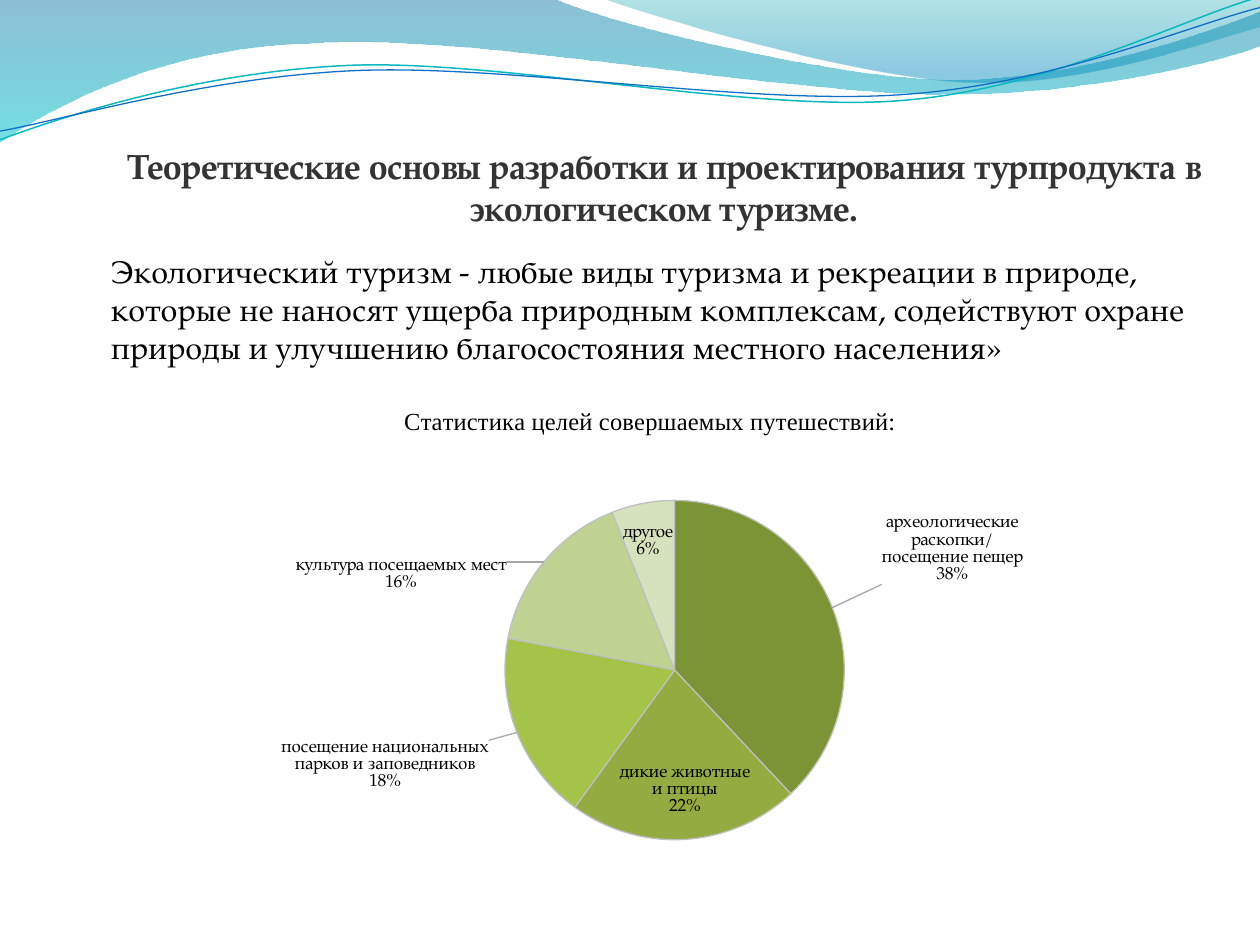
from pptx import Presentation
from pptx.chart.data import CategoryChartData
from pptx.dml.color import RGBColor
from pptx.enum.chart import XL_CHART_TYPE, XL_LABEL_POSITION
from pptx.enum.text import MSO_ANCHOR, PP_ALIGN
from pptx.oxml import parse_xml
from pptx.oxml.ns import nsdecls, qn
from pptx.util import Pt

PIE = XL_CHART_TYPE.PIE
OUTSIDE, INSIDE = XL_LABEL_POSITION.OUTSIDE_END, XL_LABEL_POSITION.INSIDE_END
MIDDLE, TOP = MSO_ANCHOR.MIDDLE, MSO_ANCHOR.TOP
CENTER, LEFT = PP_ALIGN.CENTER, PP_ALIGN.LEFT

THEME = {
    "font": "TeX Gyre Pagella", "chart_title_font": "Times New Roman",
    "title": "333333", "text": "000000", "slice_border": "BFBFBF", "leader": "A6A6A6",
    "title_size": 20, "body_size": 18, "chart_title_size": 14, "label_size": 10,
}

TITLE = "Теоретические основы разработки и проектирования турпродукта в экологическом туризме."
BODY = ("Экологический туризм - любые виды туризма и рекреации в природе, "
        "которые не наносят ущерба природным комплексам, содействуют охране "
        "природы и улучшению благосостояния местного населения»")
CHART_TITLE = "Статистика целей совершаемых путешествий:"

# category, value, colour, label position, label shift and label size
# (shift and size are shares of the chart)
SLICES = [
    ("археологические раскопки/посещение пещер", 38, "7C9336", OUTSIDE, (0.04, -0.04), None),
    ("дикие животные и птицы", 22, "93AB41", INSIDE, (0, -0.03), None),
    ("посещение национальных парков и заповедников", 18, "A5C249", OUTSIDE,
     (-0.02, 0.01), (0.19, 0.14)),
    ("культура посещаемых мест", 16, "C0D292", OUTSIDE, (-0.03, 0.07), (0.19, 0.1)),
    ("другое", 6, "D6E1BD", INSIDE, (-0.02, 0.03), None),
]
FIRST_LABEL = "археологические раскопки/\nпосещение пещер\n38%"
PLOT_AREA = {"x": 0.363, "y": 0.226, "w": 0.32, "h": 0.66}

# Outlines: a pair is a straight step, a triple of pairs is a Bezier step.
# Gradient stops: position, colour, opacity in percent.
WAVES = [
    ([(0, 0), (316.8, -0.7),
      ((342.7, 12.2), (478.1, 45.4), (545.8, 45.4)),
      ((614.2, 45.4), (689.8, 18.7), (720, 6.5)), (720.7, 25.9),
      ((707.8, 31.7), (626.4, 54.7), (537.1, 54)),
      ((447.8, 54), (275, 20.2), (185, 24.5)),
      ((92.9, 25.9), (33.1, 59.8), (-0.7, 81.4))],
     [(0, "0074A1", 45), (1, "00C6CF", 55)]),
    ([(344.9, -0.7),
      ((366.5, 7.9), (491, 44.6), (553.7, 46.8)),
      ((616.3, 49.7), (691.9, 23), (720, 15.1)), (720, 0)],
     [(0, "00A1A9", 30), (0.8, "008BBF", 45)]),
]
CURVES = [
    ([(0, 79.9),
      ((34.6, 67), (113.8, 41), (199.4, 37.4)),
      ((284.4, 33.8), (427, 64.1), (513.4, 57.6)),
      ((599.8, 51.1), (675.4, 10.8), (718.6, -1.4))], "0AB8BF", 0.85),
    ([(0, 74.9),
      ((33.8, 69.1), (118.1, 43.9), (203.8, 40.3)),
      ((290.2, 36.7), (429.8, 60.5), (516.2, 54)),
      ((601.9, 48.2), (677.5, 15.1), (720, 4.3))], "0F6FC6", 0.75),
]


def rgb(value):
    return RGBColor.from_string(value)


def is_curve(step):
    return len(step) == 3


def add_outline(slide, outline, close):
    """Build the outline from its knots, then join each triple into a Bezier step."""
    start, *steps = outline
    knots = [k for step in steps for k in (step if is_curve(step) else [step])]
    builder = slide.shapes.build_freeform(Pt(start[0]), Pt(start[1]))
    builder.add_line_segments([(Pt(x), Pt(y)) for x, y in knots], close=close)
    s = builder.convert_to_shape()
    s.shadow.inherit = False
    lines = iter(s._element.spPr.findall(".//" + qn("a:lnTo")))
    for step in steps:
        line = next(lines)
        if is_curve(step):
            bezier = parse_xml(f'<a:cubicBezTo {nsdecls("a")}/>')
            line.addprevious(bezier)
            for part in (line, next(lines), next(lines)):
                bezier.append(part[0])
                part.getparent().remove(part)
    return s


def add_wave(slide, outline, stops):
    s = add_outline(slide, outline, True)
    s.line.fill.background()
    s.fill.gradient()
    s.fill.gradient_angle = 270
    for stop, (position, colour, _) in zip(s.fill.gradient_stops, stops):
        stop.position = position
        stop.color.rgb = rgb(colour)
    colours = s._element.spPr.findall(".//" + qn("a:gs") + "/" + qn("a:srgbClr"))
    for el, (_, _, opacity) in zip(colours, stops):
        el.append(parse_xml(f'<a:alpha {nsdecls("a")} val="{opacity * 1000}"/>'))


def add_curve(slide, outline, colour, width):
    s = add_outline(slide, outline, False)
    s.fill.background()
    s.line.color.rgb = rgb(colour)
    s.line.width = Pt(width)


def set_font(font, size, colour, name=THEME["font"], bold=False):
    font.name, font.size, font.bold = name, Pt(size), bold
    font.color.rgb = rgb(colour)


def add_text(slide, box, text, size, colour, align, anchor, bold=False):
    tf = slide.shapes.add_textbox(*map(Pt, box)).text_frame
    tf.word_wrap = True
    tf.vertical_anchor = anchor
    tf.text = text
    p = tf.paragraphs[0]
    p.alignment = align
    set_font(p.runs[0].font, size, colour, bold=bold)


def manual_layout(modes="", **values):
    parts = "".join(f'<c:{key} val="{value}"/>' for key, value in values.items())
    return f"<c:manualLayout>{modes}{parts}</c:manualLayout>"


def layout(*args, **values):
    return parse_xml(f'<c:layout {nsdecls("c")}>{manual_layout(*args, **values)}</c:layout>')


def label_size(w, h):
    return parse_xml(
        f'<c:extLst {nsdecls("c")}><c:ext uri="{{CE6537A1-D6FC-4f65-9D91-7224C49458BB}}" '
        'xmlns:c15="http://schemas.microsoft.com/office/drawing/2012/chart">'
        f'<c15:layout>{manual_layout(w=w, h=h)}</c15:layout></c:ext></c:extLst>')


def add_separator(labels):
    labels.find(qn("c:showBubbleSize")).addnext(
        parse_xml(f'<c:separator {nsdecls("c")}>\n</c:separator>'))


def add_pie(slide, box):
    data = CategoryChartData()
    data.categories = [row[0] for row in SLICES]
    data.add_series("Series 1", [row[1] for row in SLICES])
    chart = slide.shapes.add_chart(PIE, *map(Pt, box), data).chart
    chart.has_legend = False
    set_font(chart.font, THEME["label_size"], THEME["text"])
    chart.has_title = True
    tf = chart.chart_title.text_frame
    tf.text = CHART_TITLE
    set_font(tf.paragraphs[0].runs[0].font, THEME["chart_title_size"], THEME["text"],
             THEME["chart_title_font"])

    plot = chart.plots[0]
    plot.vary_by_categories = True
    series = plot.series[0]
    labels = series.data_labels
    labels.show_value = False
    labels.show_category_name = labels.show_percentage = True
    for i, (_, _, colour, position, *_) in enumerate(SLICES):
        point = series.points[i]
        point.format.fill.solid()
        point.format.fill.fore_color.rgb = rgb(colour)
        point.format.line.color.rgb = rgb(THEME["slice_border"])
        point.format.line.width = Pt(0.75)
        if i == 0:
            tf = point.data_label.text_frame
            tf.text = FIRST_LABEL
            for p in tf.paragraphs:
                set_font(p.runs[0].font, THEME["label_size"], THEME["text"])
        point.data_label.position = position

    area = chart._chartSpace.find(".//" + qn("c:plotArea"))
    for old in area.findall(qn("c:layout")):
        area.remove(old)
    edges = '<c:layoutTarget val="inner"/><c:xMode val="edge"/><c:yMode val="edge"/>'
    area.insert(0, layout(edges, **PLOT_AREA))
    all_labels = area.find(".//" + qn("c:ser") + "/" + qn("c:dLbls"))
    add_separator(all_labels)
    all_labels.append(parse_xml(
        f'<c:leaderLines {nsdecls("c", "a")}><c:spPr><a:ln w="{Pt(0.75)}"><a:solidFill>'
        f'<a:srgbClr val="{THEME["leader"]}"/></a:solidFill></a:ln></c:spPr></c:leaderLines>'))
    for label, (*_, shift, size) in zip(all_labels.findall(qn("c:dLbl")), SLICES):
        for tag, shown in (("showVal", 0), ("showCatName", 1), ("showPercent", 1)):
            label.find(qn("c:" + tag)).set("val", str(shown))
        add_separator(label)
        label.find(qn("c:idx")).addnext(layout(x=shift[0], y=shift[1]))
        if size:
            label.append(label_size(*size))


prs = Presentation()
prs.slide_width, prs.slide_height = Pt(720), Pt(540)
slide = prs.slides.add_slide(prs.slide_layouts[6])
for wave in WAVES:
    add_wave(slide, *wave)
for curve in CURVES:
    add_curve(slide, *curve)
add_text(slide, (56.2, 79, 646.6, 55.4), TITLE, THEME["title_size"],
         THEME["title"], CENTER, MIDDLE, bold=True)
add_pie(slide, (67.7, 219.6, 607.7, 293.8))
add_text(slide, (56.2, 140.4, 646.6, 94.3), BODY, THEME["body_size"],
         THEME["text"], LEFT, TOP)
prs.save("out.pptx")
